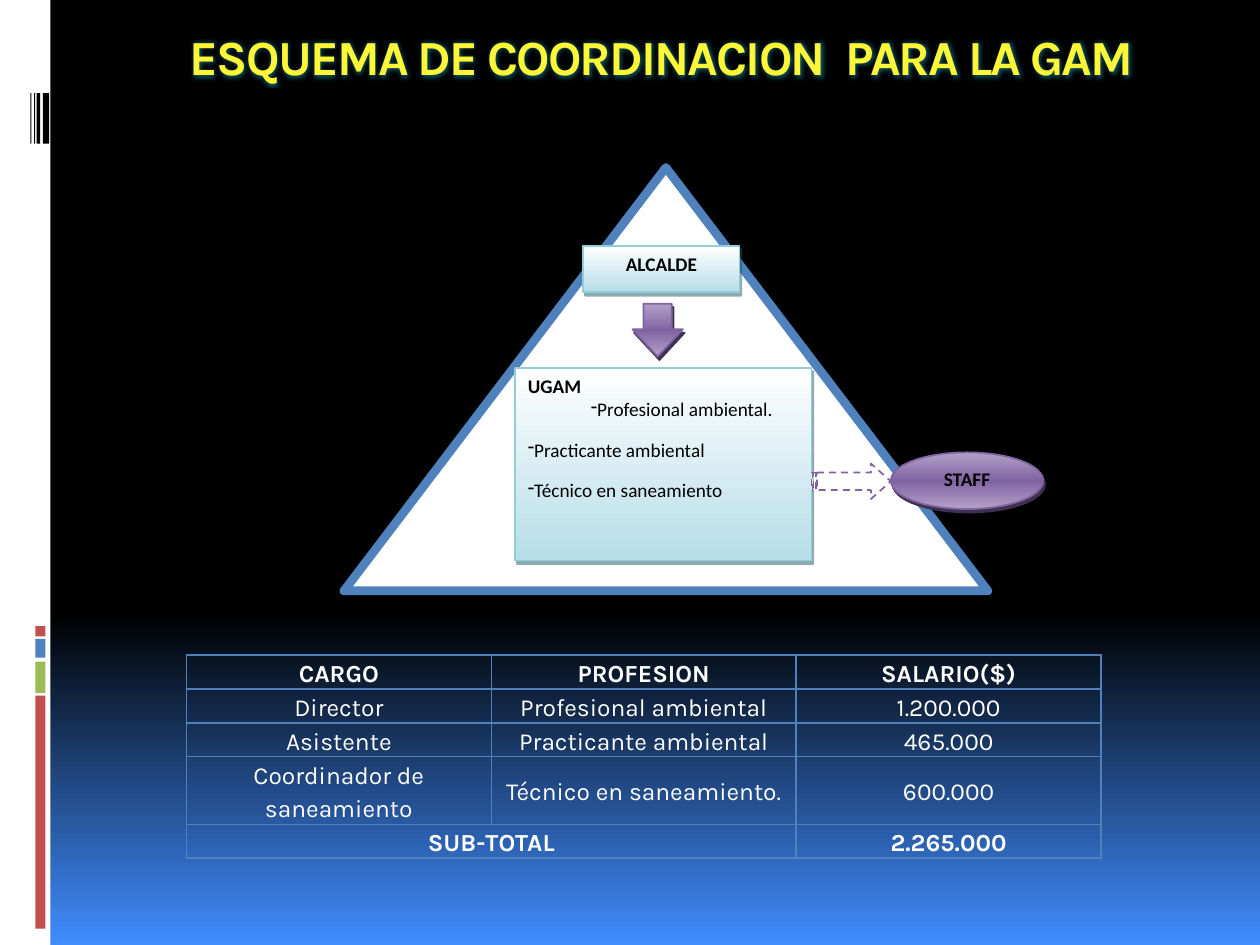
from lxml.etree import SubElement
from pptx import Presentation
from pptx.dml.color import RGBColor
from pptx.enum.dml import MSO_LINE
from pptx.enum.shapes import MSO_SHAPE as SHAPE
from pptx.enum.text import MSO_ANCHOR as ANCHOR, PP_ALIGN as ALIGN
from pptx.oxml import parse_xml
from pptx.oxml.ns import nsdecls, qn
from pptx.util import Inches, Pt

TITLE = "ESQUEMA DE COORDINACION  PARA LA GAM"
BACKDROP = [(0, "000000"), (65, "000000"), (100, "408DFF")]
AQUA = [(0, "FFFFFF"), (100, "B6DDE8")]
PURPLE = [(0, "B2A1C7"), (50, "8064A2"), (100, "B2A1C7")]
AQUA_STYLE = dict(grad=AQUA, line="92CDDC", shadow=("205867", 50))
PURPLE_STYLE = dict(grad=PURPLE, line="8064A2", shadow=("3F3151", 100))

SIDEBAR = (0, 0, 0.4, 7.5)
BARS = [  # top, height, colour
    (5.52, 1.85, "C0504D"), (5.25, 0.25, "9BBB59"),
    (5.07, 0.15, "4F81BD"), (4.97, 0.08, "C0504D"),
]
STRIPES = [(0.34, 0.05), (0.29, 0.03), (0.27, 0.01), (0.24, 0.01)]  # left, width
TEAM = [("Profesional ambiental.", 0.5), ("Practicante ambiental", 0),
        ("Técnico en saneamiento", 0)]  # text, left margin

TABLE = [
    ("CARGO", "PROFESION", "SALARIO($)"),
    ("Director", "Profesional ambiental", "1.200.000"),
    ("Asistente", "Practicante ambiental", "465.000"),
    ("Coordinador de saneamiento", "Técnico en saneamiento.", "600.000"),
    ("SUB-TOTAL", "", "2.265.000"),
]
ROW_HEIGHTS = [0.26, 0.26, 0.26, 0.52, 0.26]
COL_WIDTH = 2.42


def rgb(value):
    return RGBColor.from_string(value)


def set_gradient(fill, root, stops):
    """Fill from top to bottom with any number of (percent, colour) stops."""
    fill.gradient()
    fill.gradient_angle = 270
    gs_list = root.find(".//" + qn("a:gsLst"))
    for gs in list(gs_list):
        gs_list.remove(gs)
    for position, color in stops:
        gs = SubElement(gs_list, qn("a:gs"), pos=str(position * 1000))
        SubElement(gs, qn("a:srgbClr"), val=color)


def add_shape(slide, kind, box, fill=None, grad=None, line=None, width=1,
              shadow=None, adjust=()):
    sp = slide.shapes.add_shape(kind, *map(Inches, box))
    for i, value in enumerate(adjust):
        sp.adjustments[i] = value
    sp.shadow.inherit = False
    if grad:
        set_gradient(sp.fill, sp._element, grad)
    else:
        sp.fill.solid()
        sp.fill.fore_color.rgb = rgb(fill)
    if line:
        sp.line.color.rgb = rgb(line)
        sp.line.width = Pt(width)
    else:
        sp.line.fill.background()
    if shadow:
        color, opacity = shadow
        effects = sp._element.spPr.find(qn("a:effectLst"))
        effects.append(parse_xml(
            f'<a:outerShdw {nsdecls("a")} blurRad="0" dist="{Pt(2.2)}" dir="3780000" '
            f'algn="ctr" rotWithShape="0"><a:srgbClr val="{color}">'
            f'<a:alpha val="{opacity * 1000}"/></a:srgbClr></a:outerShdw>'))
    return sp


def write(p, text, font="Calibri", size=11, color="000000", bold=True, **layout):
    for name, value in layout.items():
        setattr(p, name, value)
    r = p.add_run()
    r.text = text
    for name, value in dict(name=font, size=Pt(size), bold=bold).items():
        setattr(r.font, name, value)
    r.font.color.rgb = rgb(color)
    return r


def add_dash_bullet(p, margin):
    pPr = p._p.get_or_add_pPr()
    pPr.set("marL", str(Inches(margin)))
    pPr.set("indent", "0")
    SubElement(pPr, qn("a:buChar"), char="-")


def add_title(slide):
    tf = slide.shapes.add_textbox(*map(Inches, (1, 0.16, 8.5, 1))).text_frame
    tf.word_wrap = True
    r = write(tf.paragraphs[0], TITLE, "Karla", 28, "FFF637", alignment=ALIGN.CENTER)
    rPr = r._r.get_or_add_rPr()
    rPr.set("spc", "-100")
    rPr.find(qn("a:solidFill")).addnext(parse_xml(
        f'<a:effectLst {nsdecls("a")}><a:glow rad="{Pt(5)}"><a:srgbClr val="1B8FA8">'
        '<a:alpha val="60000"/></a:srgbClr></a:glow></a:effectLst>'))


def add_side_decoration(slide):
    add_shape(slide, SHAPE.RECTANGLE, SIDEBAR, "FFFFFF")
    for top, height, color in BARS:
        add_shape(slide, SHAPE.RECTANGLE, (0.28, top, 0.08, height), color)
    for left, width in STRIPES:
        add_shape(slide, SHAPE.RECTANGLE, (left, 0.74, width, 0.4), "000000")


def add_pyramid(slide):
    add_shape(slide, SHAPE.ISOSCELES_TRIANGLE, (2.73, 1.33, 5.11, 3.36),
              "FFFFFF", line="4F81BD", width=5)
    mayor = add_shape(slide, SHAPE.RECTANGLE, (4.63, 1.95, 1.24, 0.37), **AQUA_STYLE)
    unit = add_shape(slide, SHAPE.RECTANGLE, (4.09, 2.92, 2.35, 1.53), **AQUA_STYLE)
    add_shape(slide, SHAPE.DOWN_ARROW, (5.02, 2.41, 0.4, 0.42),
              adjust=(0.56, 0.54), **PURPLE_STYLE)
    staff = add_shape(slide, SHAPE.OVAL, (7.07, 3.59, 1.21, 0.45), **PURPLE_STYLE)
    link = add_shape(slide, SHAPE.STRIPED_RIGHT_ARROW, (6.44, 3.68, 0.63, 0.28),
                     "FFFFFF", line="8064A2", adjust=(0.5, 0.56))
    link.line.dash_style = MSO_LINE.DASH

    for sp, text in ((mayor, "ALCALDE"), (staff, "STAFF")):
        sp.text_frame.vertical_anchor = ANCHOR.TOP
        write(sp.text_frame.paragraphs[0], text,
              alignment=ALIGN.CENTER, space_after=Pt(10))
    tf = unit.text_frame
    tf.vertical_anchor = ANCHOR.TOP
    write(tf.paragraphs[0], "UGAM", alignment=ALIGN.LEFT)
    for text, margin in TEAM:
        p = tf.add_paragraph()
        write(p, text, bold=False, alignment=ALIGN.LEFT, space_after=Pt(10))
        add_dash_bullet(p, margin)


def set_borders(cell, color="4F81BD"):
    tcPr = cell._tc.get_or_add_tcPr()
    for i, side in enumerate(("lnL", "lnR", "lnT", "lnB")):
        tcPr.insert(i, parse_xml(
            f'<a:{side} {nsdecls("a")} w="{Pt(1)}"><a:solidFill>'
            f'<a:srgbClr val="{color}"/></a:solidFill></a:{side}>'))


def add_salary_table(slide):
    rows, cols = len(TABLE), len(TABLE[0])
    box = (1.48, 5.2, COL_WIDTH * cols, sum(ROW_HEIGHTS))
    table = slide.shapes.add_table(rows, cols, *map(Inches, box)).table
    table.first_row = table.horz_banding = False
    for row, height in zip(table.rows, ROW_HEIGHTS):
        row.height = Inches(height)
    for i, values in enumerate(TABLE):
        for j, text in enumerate(values):
            cell = table.cell(i, j)
            cell.margin_left = cell.margin_right = Inches(0.07)
            cell.margin_top = cell.margin_bottom = 0
            cell.vertical_anchor = ANCHOR.MIDDLE
            cell.fill.background()
            set_borders(cell)
            if text:
                write(cell.text_frame.paragraphs[0], text, "Karla", 14, "FFFFFF",
                      i in (0, rows - 1), alignment=ALIGN.CENTER, line_spacing=1.15)
    table.cell(rows - 1, 0).merge(table.cell(rows - 1, 1))


def main():
    prs = Presentation()
    prs.slide_width, prs.slide_height = Inches(10), Inches(7.5)
    slide = prs.slides.add_slide(prs.slide_layouts[6])
    set_gradient(slide.background.fill, slide._element, BACKDROP)
    add_side_decoration(slide)
    add_title(slide)
    add_pyramid(slide)
    add_salary_table(slide)
    prs.save("out.pptx")


if __name__ == "__main__":
    main()
